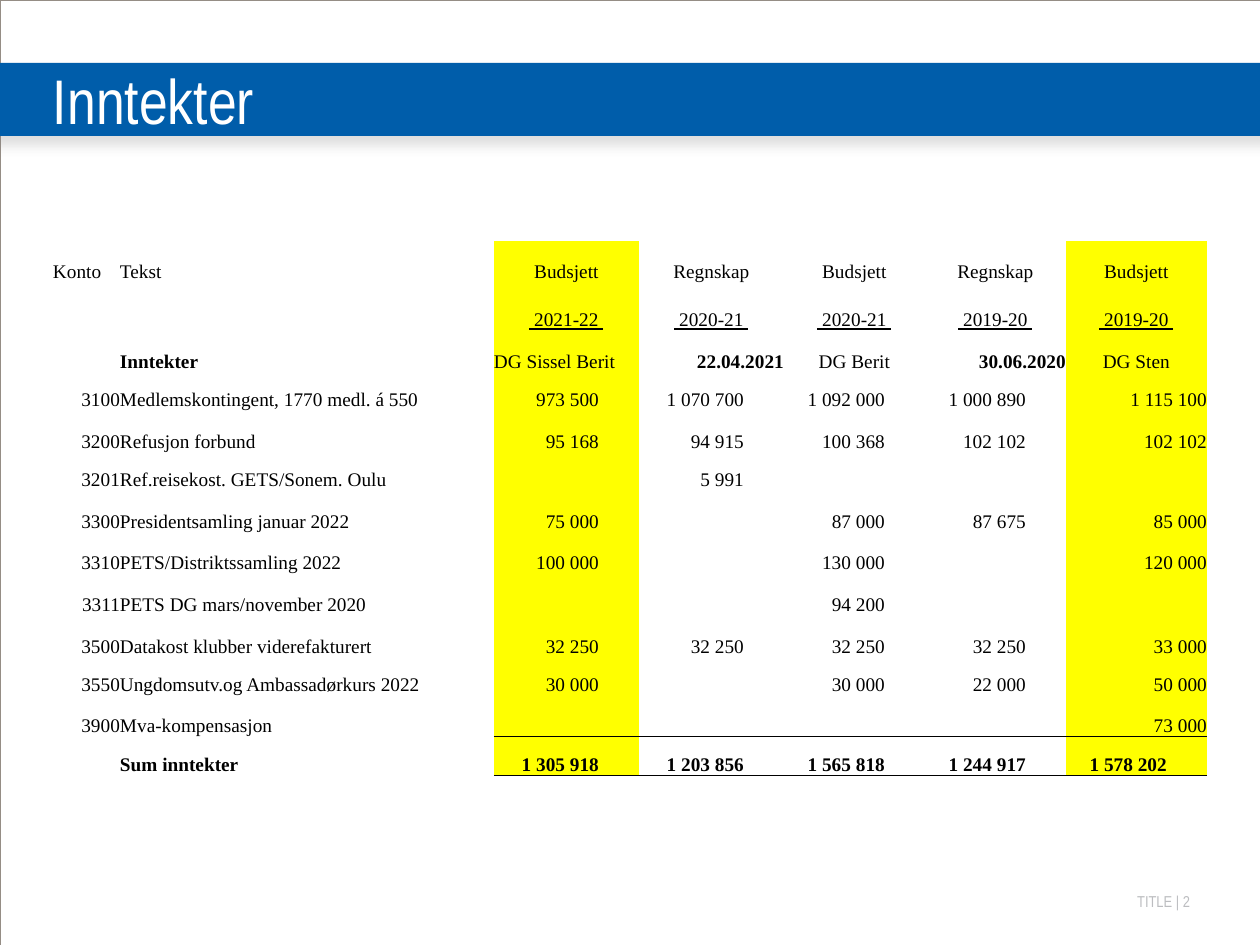
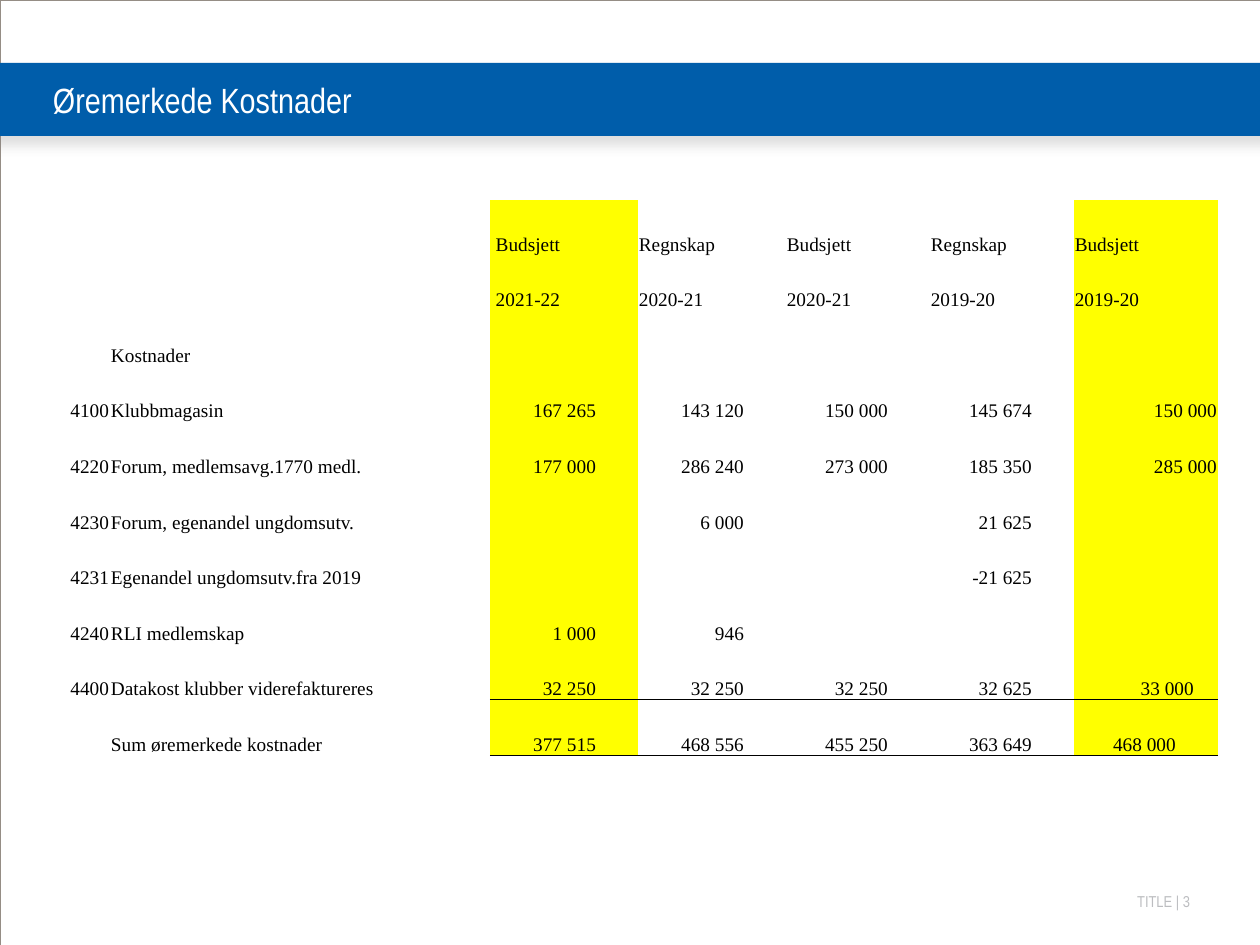
import pptx
import pptx.dml.color
import pptx.enum.shapes
import pptx.enum.text
import pptx.oxml
import pptx.oxml.ns
import pptx.util

EMU_PER_PX = 914400 / 126
WIDTH, HEIGHT = 1260, 945
COLORS = {
    "band": "005DAA",
    "title": "FFFFFF",
    "frame": "958D85",
    "footer": "BCBDC0",
    "shadow": "808080",
    "text": "000000",
    "highlight": "FFFF00",
}
TITLE_FONT = "Arial Narrow"
TABLE_FONT = "Times New Roman"
NO_GRID_STYLE = "{2D5ABB26-0587-4C30-8999-92F81FD0307C}"
NS = 'xmlns:a="http://schemas.openxmlformats.org/drawingml/2006/main"'
ALIGN = pptx.enum.text.PP_ALIGN
ANCHOR = pptx.enum.text.MSO_ANCHOR
GAP_COL, FIRST_AMOUNT, LAST_AMOUNT = 2, 3, 7

INCOME = [
    ["Konto", "Tekst", "Budsjett", "Regnskap", "Budsjett", "Regnskap", "Budsjett"],
    ["", "", " 2021-22 ", " 2020-21 ", " 2020-21 ", " 2019-20 ", " 2019-20 "],
    ["", "Inntekter", "DG Sissel Berit", "22.04.2021", "DG Berit", "30.06.2020", "DG Sten"],
    ["3100", "Medlemskontingent, 1770 medl. á 550",
     "973 500", "1 070 700", "1 092 000", "1 000 890", "1 115 100"],
    ["3200", "Refusjon forbund", "95 168", "94 915", "100 368", "102 102", "102 102"],
    ["3201", "Ref.reisekost. GETS/Sonem. Oulu", "", "5 991", "", "", ""],
    ["3300", "Presidentsamling januar 2022", "75 000", "", "87 000", "87 675", "85 000"],
    ["3310", "PETS/Distriktssamling 2022", "100 000", "", "130 000", "", "120 000"],
    ["3311", "PETS DG mars/november 2020", "", "", "94 200", "", ""],
    ["3500", "Datakost klubber viderefakturert",
     "32 250", "32 250", "32 250", "32 250", "33 000"],
    ["3550", "Ungdomsutv.og Ambassadørkurs 2022", "30 000", "", "30 000", "22 000", "50 000"],
    ["3900", "Mva-kompensasjon", "", "", "", "", "73 000"],
    ["", "Sum inntekter", "1 305 918", "1 203 856", "1 565 818", "1 244 917", "1 578 202"],
]
COSTS = [
    ["", "", " Budsjett", "Regnskap", "Budsjett", "Regnskap", "Budsjett"],
    ["", "", " 2021-22", "2020-21", "2020-21", "2019-20", "2019-20"],
    ["", "Kostnader", "", "", "", "", ""],
    ["4100", "Klubbmagasin", "167 265", "143 120", "150 000", "145 674", "150 000"],
    ["4220", "Forum, medlemsavg.1770 medl.",
     "177 000", "286 240", "273 000", "185 350", "285 000"],
    ["4230", "Forum, egenandel ungdomsutv.", "", "6 000", "", "21 625", ""],
    ["4231", "Egenandel ungdomsutv.fra 2019", "", "", "", "-21 625", ""],
    ["4240", "RLI medlemskap", "1 000", "946", "", "", ""],
    ["4400", "Datakost klubber viderefaktureres",
     "32 250", "32 250", "32 250", "32 625", "33 000"],
    ["", "Sum øremerkede kostnader",
     "377 515", "468 556", "455 250", "363 649", "468 000"],
]


def px(n):
    return pptx.util.Emu(round(n * EMU_PER_PX))


def rgb(name):
    return pptx.dml.color.RGBColor.from_string(COLORS[name])


def split_evenly(total, count):
    edges = [round(i * total / count) for i in range(count + 1)]
    return [b - a for a, b in zip(edges, edges[1:])]


def format_paragraph(p, font, size, color, align, bold=False, underline=False):
    p.alignment = align
    for r in p.runs:
        r.font.name = font
        r.font.size = pptx.util.Pt(size)
        r.font.color.rgb = rgb(color)
        r.font.bold = bold
        r.font.underline = underline


def add_rect(slide, box, fill=None, line=None):
    sp = slide.shapes.add_shape(
        pptx.enum.shapes.MSO_SHAPE.RECTANGLE, *[px(n) for n in box])
    sp.shadow.inherit = False
    if fill:
        sp.fill.solid()
        sp.fill.fore_color.rgb = rgb(fill)
    else:
        sp.fill.background()
    if line:
        sp.line.color.rgb = rgb(line)
        sp.line.width = pptx.util.Pt(0.13)
    else:
        sp.line.fill.background()
    return sp


def add_shadow(sp):
    effects = sp._element.spPr.find(pptx.oxml.ns.qn("a:effectLst"))
    effects.append(pptx.oxml.parse_xml(
        f'<a:outerShdw {NS} blurRad="{pptx.util.Pt(7)}" dist="{pptx.util.Pt(4.8)}" '
        f'dir="5400000" algn="t" rotWithShape="0"><a:srgbClr val="{COLORS["shadow"]}">'
        '<a:alpha val="25000"/></a:srgbClr></a:outerShdw>'))


def add_text(slide, text, box, size, color, align, anchor):
    tf = slide.shapes.add_textbox(*[px(n) for n in box]).text_frame
    tf.word_wrap = True
    tf.vertical_anchor = anchor
    tf.margin_left = tf.margin_right = tf.margin_top = tf.margin_bottom = 0
    tf.text = text
    format_paragraph(tf.paragraphs[0], TITLE_FONT, size, color, align)


def add_base(prs, title, title_size, number):
    slide = prs.slides.add_slide(prs.slide_layouts[6])
    add_text(slide, f"TITLE | {number}", (976, 892, 214, 19), 9, "footer",
             ALIGN.RIGHT, ANCHOR.TOP)
    add_rect(slide, (0, 0, WIDTH, HEIGHT), line="frame")
    add_shadow(add_rect(slide, (-10, 63, 1281, 73), fill="band"))
    add_text(slide, title, (53, 63, 1207, 73), title_size, "title",
             ALIGN.LEFT, ANCHOR.MIDDLE)
    return slide


def add_rule(cell, *sides):
    tc_pr = cell._tc.get_or_add_tcPr()
    for side in sides:
        tc_pr.insert(0, pptx.oxml.parse_xml(
            f'<a:{side} {NS} w="{pptx.util.Pt(0.5)}"><a:solidFill>'
            f'<a:srgbClr val="{COLORS["text"]}"/></a:solidFill></a:{side}>'))


def fill_cell(cell, text, align, inset, right, bold, underline, highlight):
    cell.margin_left, cell.margin_right = px(inset), px(right)
    cell.margin_top, cell.margin_bottom = px(inset), 0
    cell.vertical_anchor = ANCHOR.BOTTOM
    if highlight:
        cell.fill.solid()
        cell.fill.fore_color.rgb = rgb("highlight")
    else:
        cell.fill.background()
    if text:
        cell.text_frame.text = text
        format_paragraph(cell.text_frame.paragraphs[0], TABLE_FONT, 11, "text",
                         align, bold, underline)


def add_accounts(slide, rows, left, top, widths, heights, inset, amount_margin,
                 header_align, special, bold_rows=(), bold_cells=(), underlined_row=None):
    frame = slide.shapes.add_table(len(rows), len(widths), px(left), px(top),
                                   px(sum(widths)), px(sum(heights)))
    table = frame.table
    table.first_row = table.horz_banding = False
    table._tbl.tblPr.find(pptx.oxml.ns.qn("a:tableStyleId")).text = NO_GRID_STYLE
    for column, width in zip(table.columns, widths):
        column.width = px(width)
    for row, height in zip(table.rows, heights):
        row.height = px(height)
    last = len(rows) - 1
    for i, values in enumerate(rows):
        for j, text in enumerate(values[:GAP_COL] + [""] + values[GAP_COL:]):
            align, right = ALIGN.LEFT, inset
            if j >= FIRST_AMOUNT and i < 3:
                align = header_align
            elif j >= FIRST_AMOUNT:
                align = ALIGN.RIGHT
                if j < LAST_AMOUNT or i == last:
                    right = amount_margin
            elif j == 0 and i >= 3:
                align = ALIGN.RIGHT
            align, right = special.get((i, j), (align, right))
            cell = table.cell(i, j)
            fill_cell(cell, text, align, inset, right,
                      i in bold_rows or (i, j) in bold_cells, i == underlined_row,
                      j in (FIRST_AMOUNT, LAST_AMOUNT))
            if j >= FIRST_AMOUNT and i == last:
                add_rule(cell, "lnB", "lnT")
            elif j >= FIRST_AMOUNT and i == last - 1:
                add_rule(cell, "lnB")
    return table


def main():
    prs = pptx.Presentation()
    prs.slide_width, prs.slide_height = px(WIDTH), px(HEIGHT)

    slide = add_base(prs, "Inntekter", 36, 2)
    table = add_accounts(
        slide, INCOME, 53, 241, [67, 358, 16, 145, 145, 141, 141, 141],
        [42, 48, 42, 38, 42, 38, 42, 41, 42, 42, 38, 41, 39], 0, 40, ALIGN.CENTER,
        {(2, 3): (ALIGN.LEFT, 0), (2, 4): (ALIGN.RIGHT, 0), (2, 6): (ALIGN.RIGHT, 0)},
        bold_rows=(12,), bold_cells=((2, 1), (2, 4), (2, 6)), underlined_row=1)
    table.cell(10, 1).merge(table.cell(10, 2))

    slide = add_base(prs, "Øremerkede Kostnader", 20, 3)
    add_accounts(
        slide, COSTS, 42, 200, [68, 364, 16, 148, 148, 144, 144, 144],
        split_evenly(556, 10), 1, 42, ALIGN.LEFT, {(8, 7): (ALIGN.RIGHT, 24)})

    prs.save("out.pptx")


if __name__ == "__main__":
    main()
